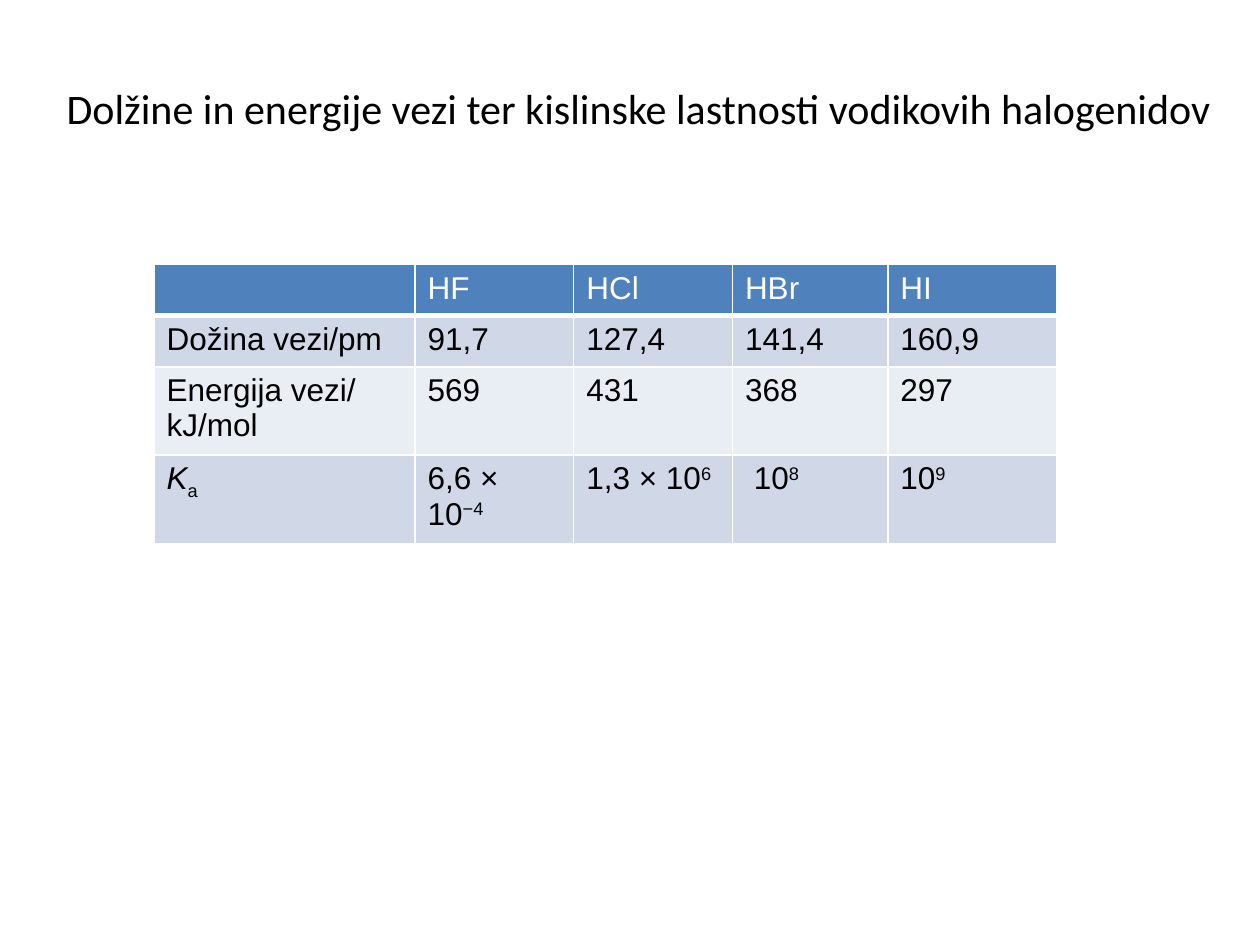
import pptx
import pptx.dml.color
import pptx.enum.text
import pptx.oxml
import pptx.oxml.ns
import pptx.util

Pt = pptx.util.Pt


def colour(value):
    return pptx.dml.color.RGBColor.from_string(value)


def write(paragraph, text, font, size, ink, italic=False, baseline=0):
    run = paragraph.add_run()
    run.text = text
    run.font.name = font
    run.font.size = Pt(size)
    run.font.bold = False
    run.font.italic = italic
    run.font.color.rgb = colour(ink)
    if baseline:
        run._r.get_or_add_rPr().set("baseline", str(baseline * 1000))


class HalideSlide:
    title_font = "Calibri"
    table_font = "Arial"
    title_size = 24
    table_size = 18
    black = "000000"
    white = "FFFFFF"
    header_fill = "4F81BD"
    band_fills = ("D0D8E8", "E9EDF4")

    def __init__(self, presentation):
        self.slide = presentation.slides.add_slide(presentation.slide_layouts[6])

    def title(self, text, left, top, width, height):
        frame = self.slide.shapes.add_textbox(
            Pt(left), Pt(top), Pt(width), Pt(height)).text_frame
        frame.word_wrap = False
        frame.auto_size = pptx.enum.text.MSO_AUTO_SIZE.SHAPE_TO_FIT_TEXT
        write(frame.paragraphs[0], text, self.title_font, self.title_size, self.black)

    def border(self, cell, side, weight):
        line = pptx.oxml.parse_xml(
            f'<a:ln{side} {pptx.oxml.ns.nsdecls("a")} w="{Pt(weight)}">'
            f'<a:solidFill><a:srgbClr val="{self.white}"/></a:solidFill></a:ln{side}>')
        cell._tc.get_or_add_tcPr().append(line)

    def cell(self, cell, runs, row):
        header = row == 0
        edges = {"L": 1, "R": 1, "T": 3 if row == 1 else 1, "B": 3 if header else 1}
        for side, weight in edges.items():
            self.border(cell, side, weight)
        cell.fill.solid()
        cell.fill.fore_color.rgb = colour(
            self.header_fill if header else self.band_fills[(row - 1) % 2])
        paragraph = cell.text_frame.paragraphs[0]
        paragraph.font.size = Pt(self.table_size)
        for text, style in runs:
            write(paragraph, text, self.table_font, self.table_size,
                  self.white if header else self.black, **style)

    def table(self, rows, left, top, widths, heights):
        table = self.slide.shapes.add_table(
            len(heights), len(widths), Pt(left), Pt(top),
            Pt(sum(widths)), Pt(sum(heights))).table
        for column, width in zip(table.columns, widths):
            column.width = Pt(width)
        for row, height in zip(table.rows, heights):
            row.height = Pt(height)
        for row, contents in enumerate(rows):
            for column, content in enumerate(contents):
                runs = [(content, {})] if isinstance(content, str) else content
                self.cell(table.cell(row, column), runs if content else [], row)


def power(base, exponent):
    return [(base, {}), (exponent, {"baseline": 30})]


def main():
    presentation = pptx.Presentation()
    presentation.slide_width = Pt(720)
    presentation.slide_height = Pt(540)
    halides = HalideSlide(presentation)
    halides.title(
        "Dolžine in energije vezi ter kislinske lastnosti vodikovih halogenidov",
        31, 43.5, 675, 36)
    acid_constant = [("K", {"italic": True}), ("a", {"baseline": -25})]
    properties = [
        ["", "HF", "HCl", "HBr", "HI"],
        ["Dožina vezi/pm", "91,7", "127,4", "141,4", "160,9"],
        ["Energija vezi/ kJ/mol", "569", "431", "368", "297"],
        [acid_constant, power("6,6 × 10", "−4"), power("1,3 × 10", "6"),
         power(" 10", "8"), power("10", "9")],
    ]
    halides.table(properties, 88, 151.2, [149.2, 90.7, 90.7, 88.8, 96.4],
                  [29.2, 29.2, 50.4, 50.4])
    presentation.save("out.pptx")


if __name__ == "__main__":
    main()
